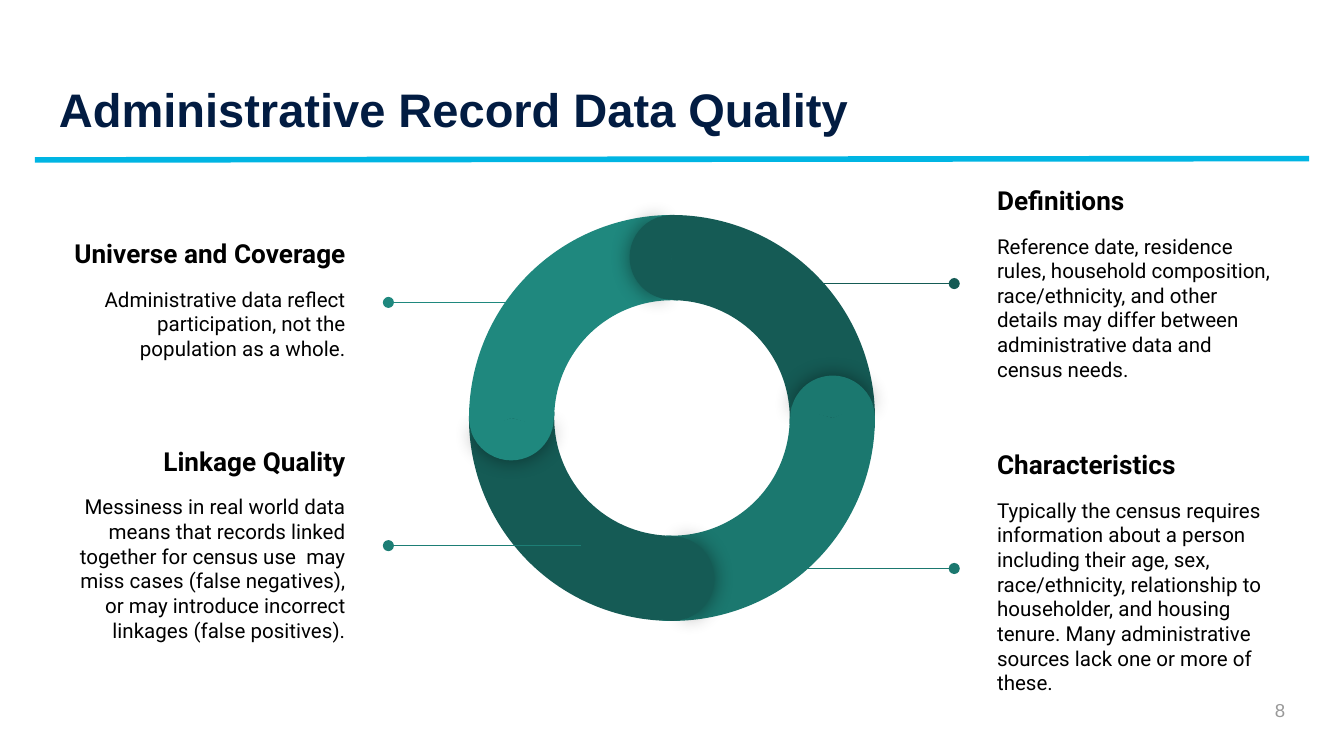
import math

import pptx
import pptx.dml.color
import pptx.enum.shapes
import pptx.enum.text
import pptx.oxml
import pptx.oxml.ns
import pptx.util
from lxml import etree

SHAPE = pptx.enum.shapes.MSO_SHAPE
ALIGN = pptx.enum.text.PP_ALIGN
ANCHOR = pptx.enum.text.MSO_ANCHOR

COLORS = {
    "navy": "021C42", "cyan": "00B5E3", "black": "000000", "grey": "999999",
    "dark": "155B55", "mid": "1B786F", "light": "1F887E", "link": "1D7E75",
}

# Square grid: 100 columns across a slide of 10 x 5.625 inches
CELL = pptx.util.Inches(0.1)
COLUMNS, ROWS = 100, 56.25


def cells(*counts):
    return [round(count * CELL) for count in counts]


def color(name):
    return pptx.dml.color.RGBColor.from_string(COLORS[name])


def add_text(slide, box, lines, align, anchor):
    """Place lines of (text, size, bold, colour, font, space before)."""
    frame = slide.shapes.add_textbox(*cells(*box)).text_frame
    frame.word_wrap = True
    frame.vertical_anchor = anchor
    frame.margin_left = frame.margin_right = CELL
    frame.margin_top = frame.margin_bottom = CELL
    frame.text = "\n".join(line[0] for line in lines)
    for paragraph, (_, size, bold, ink, font, before) in zip(frame.paragraphs, lines):
        paragraph.alignment = align
        if before:
            paragraph.space_before = pptx.util.Pt(before)
        for run in paragraph.runs:
            run.font.size = pptx.util.Pt(size)
            run.font.bold = bold
            run.font.name = font
            run.font.color.rgb = color(ink)


def add_line(slide, start, end, ink, width, dot=False):
    line = slide.shapes.add_connector(
        pptx.enum.shapes.MSO_CONNECTOR.STRAIGHT, *cells(*start, *end))
    line.line.color.rgb = color(ink)
    line.line.width = pptx.util.Pt(width)
    if dot:
        outline = line.line._get_or_add_ln()
        etree.SubElement(outline, pptx.oxml.ns.qn("a:tailEnd"), type="oval")
    etree.SubElement(line._element.spPr, pptx.oxml.ns.qn("a:effectLst"))


def add_ring_part(slide, kind, center, size, turn, adjustments, ink, glow=False):
    x, y = center
    part = slide.shapes.add_shape(
        kind, *cells(x - size / 2, y - size / 2, size, size))
    for index, value in enumerate(adjustments):
        part.adjustments[index] = value
    part.rotation = turn % 360
    part.fill.solid()
    part.fill.fore_color.rgb = color(ink)
    part.line.fill.background()
    part.shadow.inherit = False
    if glow:
        effects = part._element.spPr.find(pptx.oxml.ns.qn("a:effectLst"))
        effects.append(pptx.oxml.parse_xml(
            f'<a:outerShdw {pptx.oxml.ns.nsdecls("a")} blurRad="{pptx.util.Pt(11.2)}" '
            'dist="0" dir="0" algn="ctr" rotWithShape="0"><a:srgbClr val="000000">'
            '<a:alpha val="43000"/></a:srgbClr></a:outerShdw>'))


def add_header(slide, box):
    left, top, width, height = box
    add_line(slide, (2.6, 11.9), (COLUMNS - 2.6, 11.8), "cyan", 3)
    title = "Administrative Record Data Quality"
    add_text(slide, (left, top, width, height),
             [(title, 25.2, True, "navy", "Arial", 0)], ALIGN.LEFT, ANCHOR.BOTTOM)


def add_ring(slide, box):
    left, top, size, cap = box
    center = (left + size / 2, top + size / 2)
    reach = (size - cap) / 2
    # Direction in which each quarter starts, clockwise from the right
    quarters = [(0, "mid"), (90, "dark"), (180, "light"), (270, "dark")]

    # Quarter bands
    for angle, ink in quarters[1:] + quarters[:1]:
        add_ring_part(slide, SHAPE.BLOCK_ARC, center, size, angle + 150,
                      (126.2, 181.77, 0.21), ink)

    # Rounded starts: a shaded front half, then a plain half hiding the seam
    for angle, ink in quarters:
        spot = (center[0] + reach * math.cos(math.radians(angle)),
                center[1] + reach * math.sin(math.radians(angle)))
        add_ring_part(slide, SHAPE.PIE, spot, cap, angle + 90.7,
                      (61.9, 149.96), ink, glow=True)
        add_ring_part(slide, SHAPE.PIE, spot, cap, angle + 270,
                      (40.28, 171.84), ink)


def add_callout(slide, box, heading, detail, align, lead, ink):
    """Text block with a lead line given as (ring end, dot end, row)."""
    add_text(slide, box, [(heading, 14, True, "black", "Roboto", 0),
                          (detail, 11, False, "black", "Roboto", 9.5)],
             align, ANCHOR.MIDDLE)
    inner, outer, row = lead
    add_line(slide, (inner, row), (outer, row), ink, 0.75, dot=True)


def add_page_number(slide, box):
    add_text(slide, box, [("8", 10, False, "grey", "Arial", 0)],
             ALIGN.RIGHT, ANCHOR.MIDDLE)


def main():
    deck = pptx.Presentation()
    deck.slide_width, deck.slide_height = cells(COLUMNS, ROWS)
    slide = deck.slides.add_slide(deck.slide_layouts[6])

    add_header(slide, (3.4, 4.9, 93.2, 6.3))
    add_page_number(slide, (92.1, 50.7, 4.5, 4.3))
    add_ring(slide, (34.9, 16, 30.2, 6.3))

    # Callouts: text top, heading, detail, lead line, line colour
    width, height = 23.2, 14.1
    sides = [
        (3.5, ALIGN.RIGHT, [
            (15.2, "Universe and Coverage",
             "Administrative data reflect participation, not the population as a whole.",
             (40.3, 28.9, 22.5), "light"),
            (33.4, "Linkage Quality",
             "Messiness in real world data means that records linked together for "
             "census use  may miss cases (false negatives), or may introduce "
             "incorrect linkages (false positives).",
             (43.2, 28.9, 40.6), "link")]),
        (73.2, ALIGN.LEFT, [
            (14, "Definitions",
             "Reference date, residence rules, household composition, race/ethnicity, "
             "and other details may differ between administrative data and census needs.",
             (57, 71, 21.1), "dark"),
            (35.5, "Characteristics",
             "Typically the census requires information about a person including "
             "their age, sex, race/ethnicity, relationship to householder, and housing "
             "tenure. Many administrative sources lack one or more of these.",
             (57, 71, 42.3), "mid")]),
    ]
    for left, align, callouts in sides:
        for top, heading, detail, lead, ink in callouts:
            add_callout(slide, (left, top, width, height),
                        heading, detail, align, lead, ink)

    deck.save("out.pptx")


if __name__ == "__main__":
    main()
